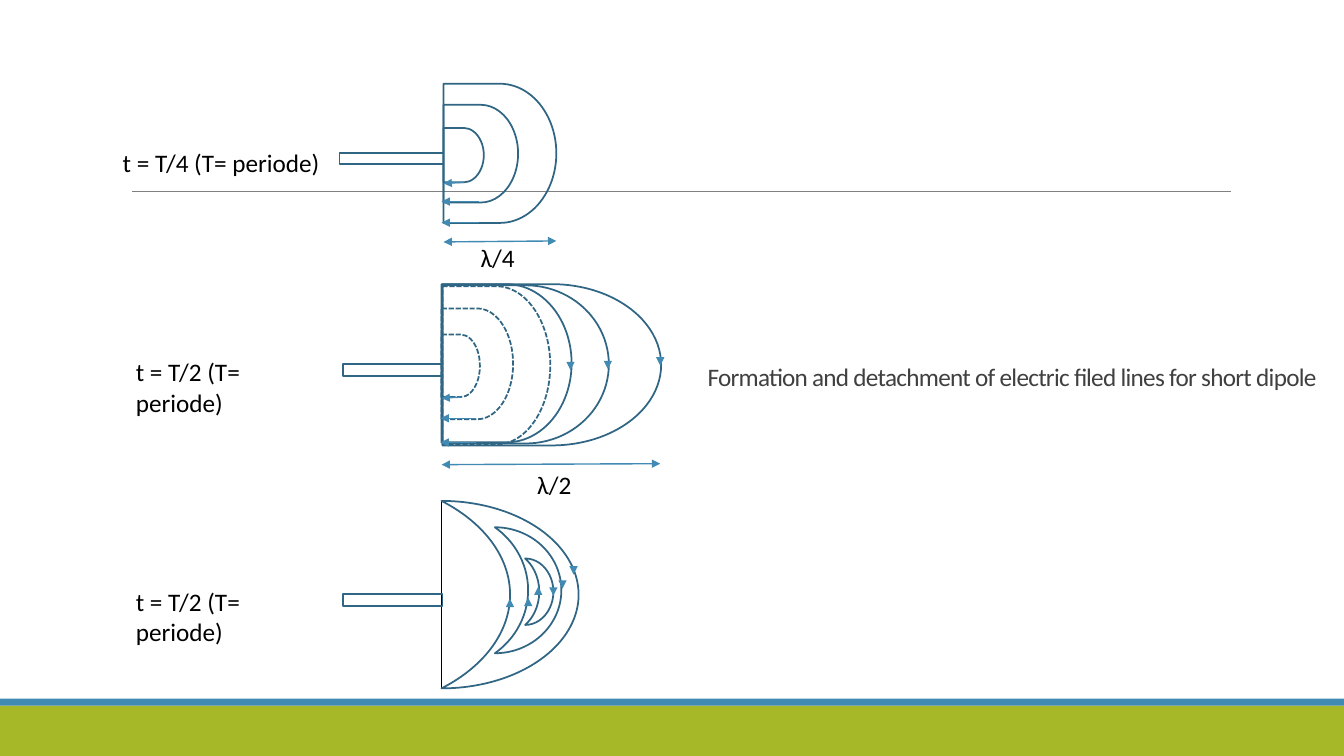
"""Builds the slide on electric field lines leaving a short dipole."""
from dataclasses import dataclass

from lxml.etree import SubElement
from pptx import Presentation
from pptx.dml.color import RGBColor
from pptx.enum.dml import MSO_LINE
from pptx.enum.shapes import MSO_CONNECTOR, MSO_SHAPE
from pptx.enum.text import MSO_ANCHOR, MSO_AUTO_SIZE, PP_ALIGN
from pptx.oxml.ns import qn
from pptx.util import Pt


@dataclass(frozen=True)
class Theme:
    font: str = "Calibri"
    text_size: float = 18
    title_color: str = "404040"
    text_color: str = "000000"
    field_color: str = "306684"
    arrow_color: str = "418AB3"
    band_color: str = "A6B727"
    rule_color: str = "808080"
    field_width: float = 1.25
    arrow_width: float = 1
    rule_width: float = 0.5


class DipolePage:
    def __init__(self, page, theme):
        self.page = page
        self.theme = theme

    def style_text(self, frame, color):
        for para in frame.paragraphs:
            para.alignment = PP_ALIGN.LEFT
            for span in para.runs:
                span.font.name = self.theme.font
                span.font.size = Pt(self.theme.text_size)
                span.font.color.rgb = RGBColor.from_string(color)

    def title(self, text, left, top, width, height):
        box = self.page.shapes.title
        box.left, box.top, box.width, box.height = map(Pt, (left, top, width, height))
        frame = box.text_frame
        frame.text = text
        frame.word_wrap = True
        frame.auto_size = MSO_AUTO_SIZE.NONE
        frame.vertical_anchor = MSO_ANCHOR.BOTTOM
        self.style_text(frame, self.theme.title_color)
        para = frame.paragraphs[0]
        para.line_spacing = 0.85
        para.runs[0].font._element.set("spc", "-50")

    def label(self, text, left, top, width):
        box = self.page.shapes.add_textbox(Pt(left), Pt(top), Pt(width), Pt(26.6))
        box.text_frame.text = text
        box.text_frame.word_wrap = True
        self.style_text(box.text_frame, self.theme.text_color)

    def band(self, top, height, color):
        shape = self.page.shapes.add_shape(
            MSO_SHAPE.RECTANGLE, Pt(0), Pt(top), Pt(960), Pt(height))
        shape.shadow.inherit = False
        shape.fill.solid()
        shape.fill.fore_color.rgb = RGBColor.from_string(color)
        shape.line.fill.background()

    def outline(self, kind, left, top, width, height, dashed=False, rotation=0):
        shape = self.page.shapes.add_shape(
            kind, Pt(left), Pt(top), Pt(width), Pt(height))
        shape.shadow.inherit = False
        shape.rotation = rotation
        shape.fill.background()
        shape.line.color.rgb = RGBColor.from_string(self.theme.field_color)
        shape.line.width = Pt(self.theme.field_width)
        if dashed:
            shape.line.dash_style = MSO_LINE.SQUARE_DOT

    def line(self, start, end, color, width, arrows=()):
        connector = self.page.shapes.add_connector(
            MSO_CONNECTOR.STRAIGHT, *map(Pt, (*start, *end)))
        connector.line.color.rgb = RGBColor.from_string(color)
        connector.line.width = Pt(width)
        outline = connector.line._get_or_add_ln()
        for arrow in arrows:
            SubElement(outline, qn(f"a:{arrow}"), type="triangle")
        SubElement(connector._element.spPr, qn("a:effectLst"))

    def arrow(self, start, end, arrows=("tailEnd",)):
        self.line(start, end, self.theme.arrow_color, self.theme.arrow_width, arrows)

    def measure(self, start, end):
        self.arrow(start, end, ("headEnd", "tailEnd"))

    def field_arrow(self, x, y, length):
        self.arrow((x, y), (x, y + length))


def draw_quarter_period(slide):
    for top, width, height in ((59.8, 80.6, 99.4), (74.9, 53.3, 69.8), (91.4, 28.8, 38.9)):
        slide.outline(MSO_SHAPE.FLOWCHART_DELAY, 316.8, top, width, height)
    slide.outline(MSO_SHAPE.RECTANGLE, 242.6, 109.4, 74.2, 7.9)
    for y in (159.1, 144):
        slide.arrow((342, y), (315.4, y))
    slide.arrow((331.2, 130.3), (316.8, 131))
    slide.measure((316.8, 172.8), (397.4, 172.1))
    slide.label("λ/4", 336.2, 169.9, 42.5)
    slide.label("t = T/4 (T= periode)", 80.6, 101.5, 162)


def draw_half_period(slide):
    loops = (
        (315.4, 203, 92.9, 113, False),
        (315.4, 220.3, 51.1, 79.2, True),
        (315.4, 239, 27.4, 44.6, True),
        (316.1, 203.8, 118.8, 113, False),
        (316.1, 203, 156.2, 115.2, False),
        (316.1, 204.5, 77, 113, True),
    )
    for left, top, width, height, dashed in loops:
        slide.outline(MSO_SHAPE.FLOWCHART_DELAY, left, top, width, height, dashed)
    slide.outline(MSO_SHAPE.RECTANGLE, 244.8, 259.9, 71.3, 8.6)
    for y in (316.1, 298.8):
        slide.arrow((339.8, y), (314.6, y))
    slide.arrow((329, 283.7), (315.4, 284.4))
    slide.measure((315.4, 331.9), (471.6, 331.2))
    for x, y in ((407.5, 259.9), (434.2, 259.2), (471.6, 256.6)):
        slide.field_arrow(x, y, 4.5)
    slide.label("λ/2", 376.6, 331.9, 42.5)
    slide.label("t = T/2 (T= periode)", 90, 251.3, 150)


def draw_detachment(slide):
    theme = slide.theme
    slide.line((315.4, 357.8), (315.4, 491.8), theme.text_color, theme.arrow_width)
    for left, top, width, height in (
            (315.4, 357.8, 97.9, 133.9), (353.5, 376.6, 47.5, 90), (375.1, 398.9, 20.2, 47.5)):
        slide.outline(MSO_SHAPE.MOON, left, top, width, height, rotation=180)
    for x, y in ((395.3, 421.9), (401.8, 416.9), (409.7, 406.8)):
        slide.field_arrow(x, y, 3.6)
    for x, y in ((364.3, 431.3), (377.3, 430.6), (384.5, 422.6)):
        slide.field_arrow(x, y, -3.6)
    slide.outline(MSO_SHAPE.RECTANGLE, 244.8, 424.1, 71.3, 8.6)
    slide.label("t = T/2 (T= periode)", 90, 415.4, 150)


def main():
    deck = Presentation()
    deck.slide_width, deck.slide_height = Pt(960), Pt(540)
    theme = Theme()
    slide = DipolePage(deck.slides.add_slide(deck.slide_layouts[5]), theme)
    slide.band(504, 36, theme.band_color)
    slide.band(499, 5, theme.arrow_color)
    slide.line((94.3, 136.8), (879.1, 136.8), theme.rule_color, theme.rule_width)
    slide.title("Formation and detachment of electric filed lines for short dipole",
                498.2, 169.2, 453.6, 114.5)
    draw_quarter_period(slide)
    draw_half_period(slide)
    draw_detachment(slide)
    deck.save("out.pptx")


if __name__ == "__main__":
    main()
